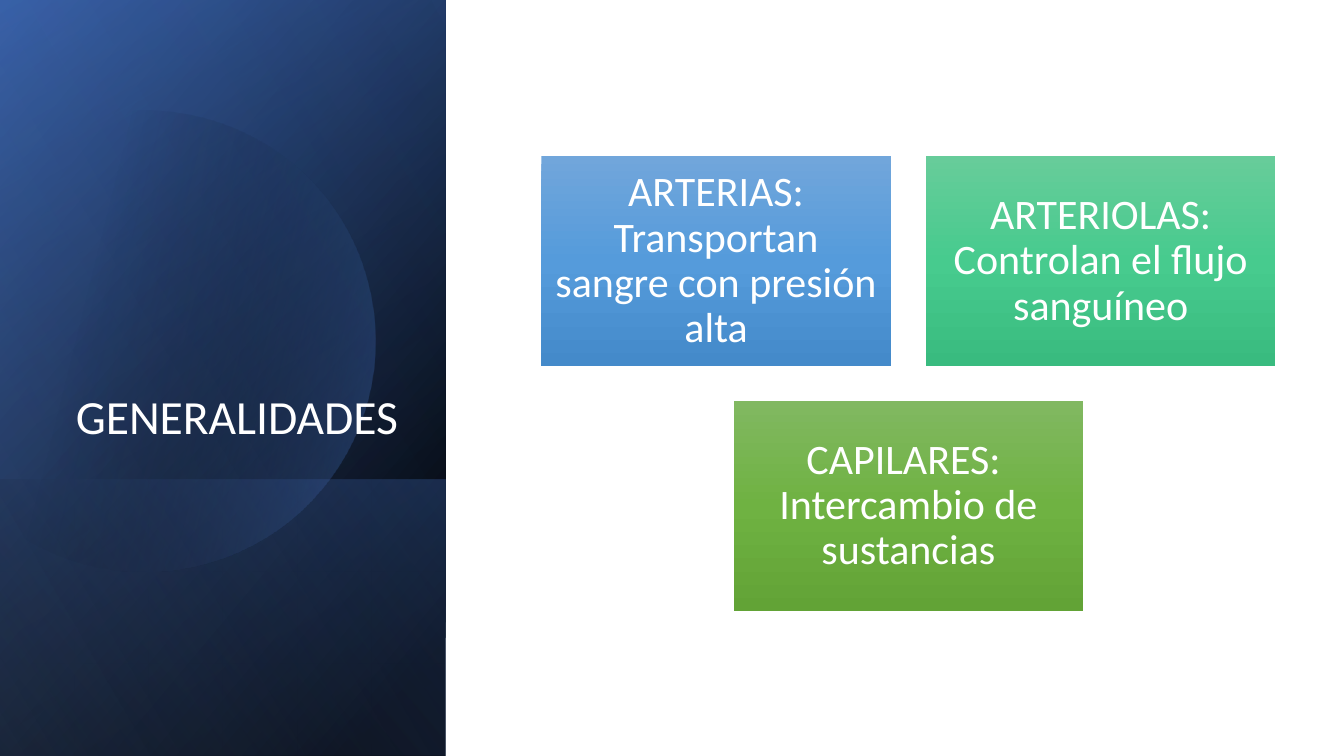
from lxml import etree
from pptx import Presentation
from pptx.dml.color import RGBColor
from pptx.enum import shapes, text
from pptx.oxml import ns
from pptx.util import Inches, Pt

WHITE = RGBColor(0xFF, 0xFF, 0xFF)
BLACK = RGBColor(0x00, 0x00, 0x00)
NAVY = RGBColor(0x2F, 0x55, 0x97)
BLUE = RGBColor(0x44, 0x72, 0xC4)
PALE_BLUE = RGBColor(0x8F, 0xAA, 0xDC)
SKY = [RGBColor(0x71, 0xA6, 0xDB), RGBColor(0x55, 0x9B, 0xDB), RGBColor(0x44, 0x8A, 0xCA)]
MINT = [RGBColor(0x67, 0xCC, 0x9A), RGBColor(0x47, 0xCB, 0x8E), RGBColor(0x39, 0xBB, 0x7F)]
GREEN = [RGBColor(0x81, 0xB8, 0x61), RGBColor(0x6F, 0xB2, 0x42), RGBColor(0x62, 0xA3, 0x36)]

CARDS = [
    ("ARTERIAS: Transportan sangre con presión alta", SKY),
    ("ARTERIOLAS: Controlan el flujo sanguíneo", MINT),
    ("CAPILARES:  Intercambio de sustancias", GREEN),
]
PANEL_LAYERS = [
    (0, 7.5, 50, [(8, BLACK, 100), (100, NAVY, 100)]),
    (0, 7.5, 30, [(0, BLACK, 0), (99, BLUE, 46)]),
    (4.76, 2.74, 130, [(2, BLUE, 29), (100, BLACK, 30)]),
]
GLOW = (0, 7.5, 120, [(0, BLACK, 0), (99, PALE_BLUE, 11)])
DISC_START = (1.49, 1.1)
DISC_RIGHT = [
    [(2.46, 1.12), (3.35, 1.77), (3.63, 2.75)],
    [(3.98, 3.97), (3.28, 5.23), (2.07, 5.58)],
    [(1.31, 5.8), (0.53, 5.61), (-0.03, 5.14)],
]
DISC_EDGE = [(-0.15, 5.03), (-0.15, 1.75), (0, 1.61)]
DISC_TOP = [
    [(0.23, 1.42), (0.5, 1.28), (0.8, 1.19)],
    [(1.03, 1.13), (1.26, 1.1), DISC_START],
]


def paint_gradient(shape, stops, angle):
    shape.shadow.inherit = False
    shape.line.fill.background()
    shape.fill.background()
    gradient = etree.Element(ns.qn("a:gradFill"), rotWithShape="1")
    stop_list = etree.SubElement(gradient, ns.qn("a:gsLst"))
    for position, color, opacity in stops:
        stop = etree.SubElement(stop_list, ns.qn("a:gs"), pos=str(position * 1000))
        tint = etree.SubElement(stop, ns.qn("a:srgbClr"), val=str(color))
        if opacity < 100:
            etree.SubElement(tint, ns.qn("a:alpha"), val=str(opacity * 1000))
    etree.SubElement(gradient, ns.qn("a:lin"), ang=str(round(angle * 60000)), scaled="0")
    properties = shape._element.spPr
    properties.replace(properties.find(ns.qn("a:noFill")), gradient)


def write_text(shape, wording, size, align, anchor, inset=(0.1, 0.05)):
    frame = shape.text_frame
    frame.word_wrap = True
    frame.auto_size = text.MSO_AUTO_SIZE.NONE
    frame.vertical_anchor = anchor
    frame.margin_left = frame.margin_right = Inches(inset[0])
    frame.margin_top = frame.margin_bottom = Inches(inset[1])
    para = frame.paragraphs[0]
    para.alignment = align
    para.line_spacing = 0.9
    span = para.add_run()
    span.text = wording
    span.font.name = "Calibri"
    span.font.size = Pt(size)
    span.font.color.rgb = WHITE


def add_layer(page, left, top, width, height, angle, stops):
    shape = page.shapes.add_shape(
        shapes.MSO_SHAPE.RECTANGLE,
        Inches(left + (width - height) / 2), Inches(top + (height - width) / 2),
        Inches(height), Inches(width))
    shape.rotation = 90
    shape._element.spPr.find(ns.qn("a:xfrm")).set("flipH", "1")
    paint_gradient(shape, stops, angle)


def curve_points(start, curves, steps=24):
    points = []
    for first, second, end in curves:
        for step in range(1, steps + 1):
            t = step / steps
            weights = ((1 - t) ** 3, 3 * t * (1 - t) ** 2, 3 * t ** 2 * (1 - t), t ** 3)
            corners = (start, first, second, end)
            points.append(tuple(sum(weight * corner[axis] for weight, corner in zip(weights, corners))
                                for axis in (0, 1)))
        start = end
    return points


def add_disc(page, left, top):
    outline = curve_points(DISC_START, DISC_RIGHT) + DISC_EDGE + curve_points(DISC_EDGE[-1], DISC_TOP)
    places = [(Inches(left + x), Inches(top + y)) for x, y in outline]
    builder = page.shapes.build_freeform(*places[-1])
    builder.add_line_segments(places[:-1], close=True)
    paint_gradient(builder.convert_to_shape(), [(29, BLACK, 0), (100, BLUE, 43)], 13.9)


def add_title_panel(page, left, top, width):
    for offset, height, angle, stops in PANEL_LAYERS:
        add_layer(page, left, top + offset, width, height, angle, stops)
    add_disc(page, left, top)
    offset, height, angle, stops = GLOW
    add_layer(page, left, top + offset, width, height, angle, stops)
    title = page.shapes.title
    title.left, title.top = Inches(left + 0.64), Inches(top + 1.84)
    title.width, title.height = Inches(3.41), Inches(2.62)
    write_text(title, "GENERALIDADES", 34, text.PP_ALIGN.RIGHT, text.MSO_ANCHOR.BOTTOM)
    page.shapes._spTree.append(title._element)


def add_cards(page, left, top, width, columns=2, card_height=2.08, gap=0.35):
    card_width = (width - gap * (columns - 1)) / columns
    for index, (wording, colors) in enumerate(CARDS):
        row, column = divmod(index, columns)
        in_row = min(columns, len(CARDS) - row * columns)
        indent = (columns - in_row) * (card_width + gap) / 2
        card = page.shapes.add_shape(
            shapes.MSO_SHAPE.RECTANGLE,
            Inches(left + indent + column * (card_width + gap)),
            Inches(top + row * (card_height + gap)),
            Inches(card_width), Inches(card_height))
        paint_gradient(card, [(50 * step, color, 100) for step, color in enumerate(colors)], 90)
        write_text(card, wording, 30, text.PP_ALIGN.CENTER, text.MSO_ANCHOR.MIDDLE, inset=(0.12, 0.12))


def main():
    deck = Presentation()
    deck.slide_width, deck.slide_height = Inches(13.33), Inches(7.5)
    page = deck.slides.add_slide(deck.slide_layouts[5])
    add_title_panel(page, 0, 0, 4.42)
    add_cards(page, 5.37, 1.55, 7.28)
    deck.save("out.pptx")


if __name__ == "__main__":
    main()
